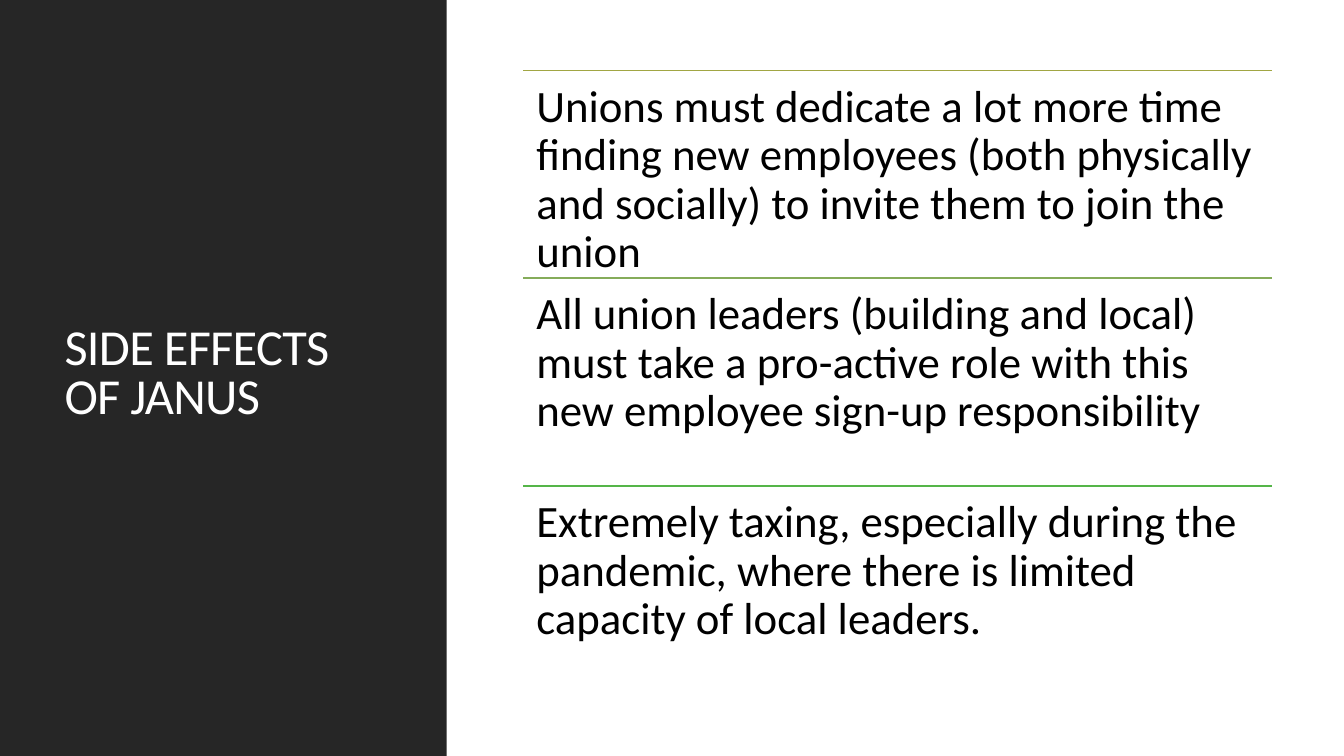
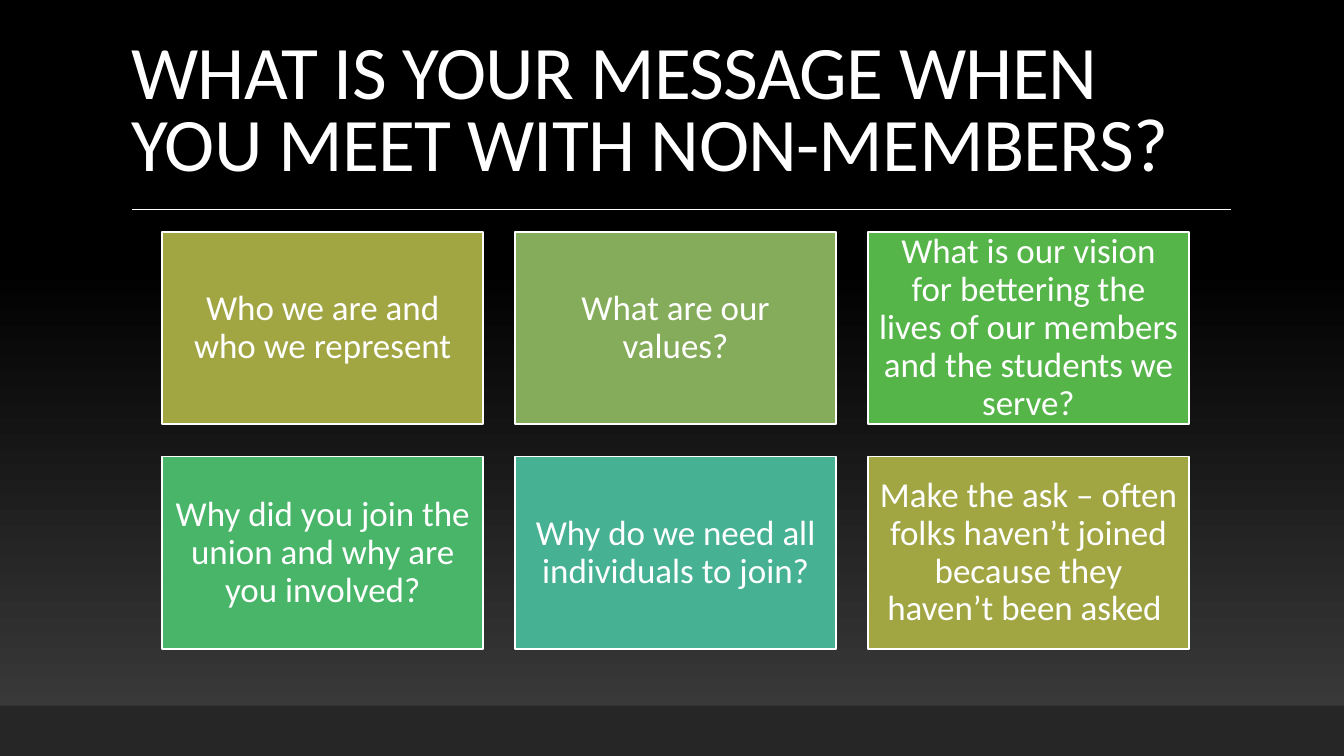
"""Build two slides on union sign-up: side effects and message to non-members."""
from lxml import etree
from pptx import Presentation
from pptx.dml.color import RGBColor
from pptx.enum.shapes import MSO_CONNECTOR as CONN, MSO_SHAPE as SHAPE
from pptx.enum.text import MSO_ANCHOR as ANCHOR, MSO_AUTO_SIZE as AUTO, PP_ALIGN as ALIGN
from pptx.oxml.ns import qn
from pptx.util import Inches, Pt

EFFECTS_TITLE = "SIDE EFFECTS OF JANUS"
EFFECTS = [
    "Unions must dedicate a lot more time finding new employees (both physically and socially) "
    "to invite them to join the union",
    "All union leaders (building and local) must take a pro-active role with this new employee "
    "sign-up responsibility",
    "Extremely taxing, especially during the pandemic, where there is limited capacity of local leaders.",
]
MESSAGE_TITLE = "WHAT IS YOUR MESSAGE WHEN YOU MEET WITH NON-MEMBERS?"
MESSAGES = [
    "Who we are and who we represent",
    "What are our values?",
    "What is our vision for bettering the lives of our members and the students we serve?",
    "Why did you join the union and why are you involved?",
    "Why do we need all individuals to join?",
    "Make the ask – often folks haven’t joined because they haven’t been asked ",
]

COLORS = {"white": "FFFFFF", "black": "000000", "band": "262626", "glow": "3F3F3F",
          "olive": "A1A643", "sage": "85AC5A", "green": "55B549", "mint": "48B569", "teal": "47B194"}
ACCENTS = ["olive", "sage", "green", "mint", "teal"]
FONT = "Calibri"
WIDTH, HEIGHT = 13.33, 7.5


def rgb(name):
    return RGBColor.from_string(COLORS[name])


def accent(index):
    return ACCENTS[index % len(ACCENTS)]


def write(shape, text, size, color, anchor, align=ALIGN.LEFT, spacing=0.9, inset=None):
    tf = shape.text_frame
    tf.text = text
    tf.word_wrap = True
    tf.auto_size = AUTO.NONE
    tf.vertical_anchor = anchor
    if inset is not None:
        tf.margin_left = tf.margin_right = tf.margin_top = tf.margin_bottom = Inches(inset)
    p = tf.paragraphs[0]
    p.alignment, p.line_spacing = align, spacing
    font = p.runs[0].font
    font.name, font.size, font.color.rgb = FONT, Pt(size), rgb(color)
    return p.runs[0]


def add_title(s, text, box, size, anchor):
    title = s.shapes.title
    title.left, title.top, title.width, title.height = map(Inches, box)
    r = write(title, text, size, "white", anchor, spacing=0.8)
    r.font._element.set("spc", "-50")
    return title


def add_rect(s, box, fill, line=None):
    sp = s.shapes.add_shape(SHAPE.RECTANGLE, *map(Inches, box))
    sp.shadow.inherit = False
    sp.fill.solid()
    sp.fill.fore_color.rgb = rgb(fill)
    if line:
        sp.line.color.rgb, sp.line.width = rgb(line), Pt(1.25)
    else:
        sp.line.fill.background()
    return sp


def add_rule(s, left, right, y, color, width):
    rule = s.shapes.add_connector(CONN.STRAIGHT, Inches(left), Inches(y), Inches(right), Inches(y))
    rule.line.color.rgb, rule.line.width = rgb(color), Pt(width)
    etree.SubElement(rule.element.spPr, qn("a:effectLst"))


def build_effects(prs):
    s = prs.slides.add_slide(prs.slide_layouts[5])
    title = add_title(s, EFFECTS_TITLE, (0.54, 0.57, 3.37, 6.31), 36, ANCHOR.MIDDLE)
    panel = add_rect(s, (0, 0, 4.43, HEIGHT), "band")
    title.element.addprevious(panel.element)
    left, top, width, height = 5.19, 0.7, 7.43, 2.06
    for i, text in enumerate(EFFECTS):
        y = top + i * height
        add_rule(s, left, left + width, y, accent(i), 1.25)
        box = s.shapes.add_textbox(*map(Inches, (left, y, width, height)))
        write(box, text, 32, "black", ANCHOR.TOP, inset=0.13)


def build_messages(prs):
    s = prs.slides.add_slide(prs.slide_layouts[5])
    fill = s.background.fill
    fill.gradient()
    fill.gradient_angle = 90
    for stop, color, position in zip(fill.gradient_stops, ("glow", "black"), (0, 0.65)):
        stop.color.rgb, stop.position = rgb(color), position
    add_title(s, MESSAGE_TITLE, (1.2, 0.31, 11, 1.59), 54, ANCHOR.BOTTOM)
    add_rule(s, 1.31, 12.21, 2.08, "white", 1)
    add_rect(s, (0, 7, WIDTH, 0.5), "band")
    left, top, width, height, gap, columns = 1.61, 2.3, 3.18, 1.91, 0.32, 3
    for i, text in enumerate(MESSAGES):
        row, column = divmod(i, columns)
        box = (left + column * (width + gap), top + row * (height + gap), width, height)
        card = add_rect(s, box, accent(i), "white")
        write(card, text, 25, "white", ANCHOR.MIDDLE, ALIGN.CENTER, inset=0.1)


def main():
    prs = Presentation()
    prs.slide_width, prs.slide_height = Inches(WIDTH), Inches(HEIGHT)
    build_effects(prs)
    build_messages(prs)
    prs.save("out.pptx")


if __name__ == "__main__":
    main()
